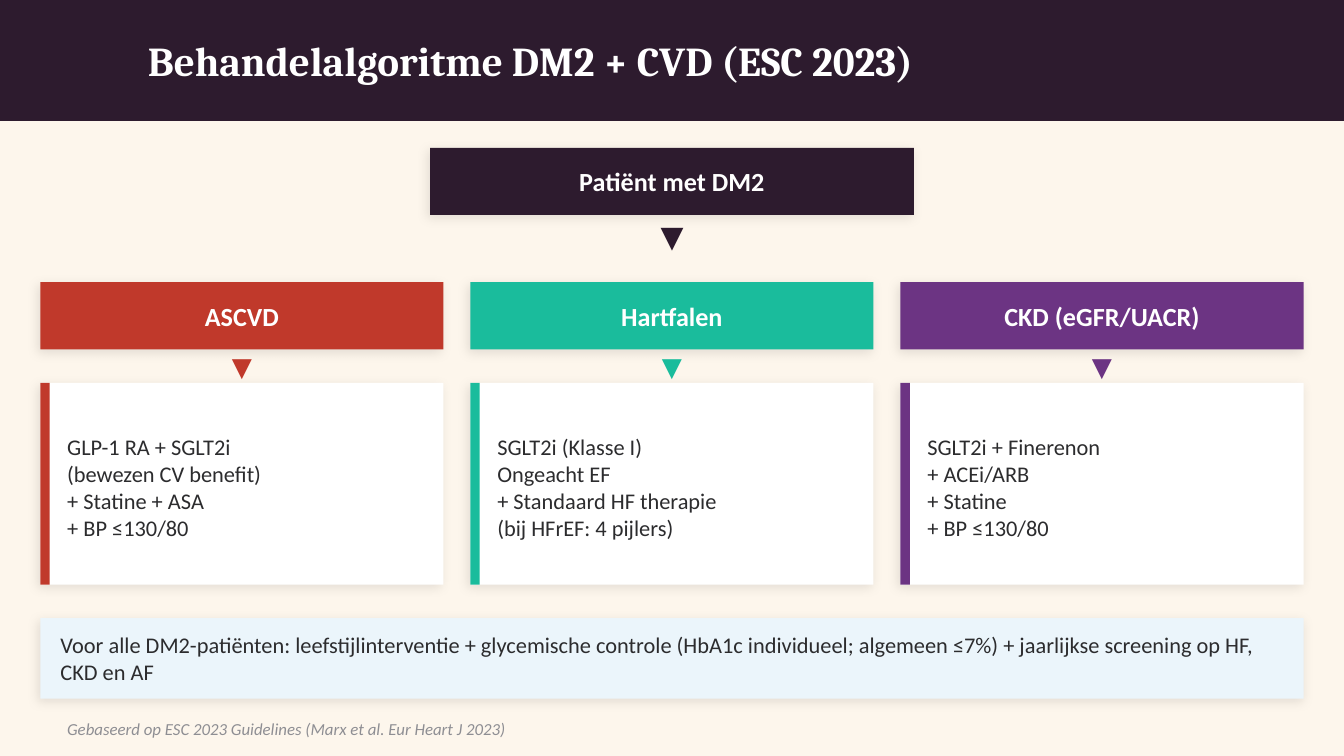
from lxml import etree
from pptx import Presentation
from pptx import util as u
from pptx.dml.color import RGBColor
from pptx.enum import shapes, text
from pptx.oxml.ns import qn

PX = u.Inches(1) // 200  # 200 px to the inch

THEME = {
    "page": "FDF6EC", "dark": "2D1B2E", "white": "FFFFFF", "ink": "2C2C2E",
    "note": "EBF5FB", "muted": "8E8E93",
    "red": "C0392B", "teal": "1ABC9C", "purple": "6C3483",
    "heading": "Cambria", "body": "Calibri",
    "title": 22, "big_arrow": 16, "label": 14, "text": 12, "source": 9,
}

prs = Presentation()
prs.slide_width, prs.slide_height = 2000 * PX, 1125 * PX
s = prs.slides.add_slide(prs.slide_layouts[6])
s.background.fill.solid()
s.background.fill.fore_color.rgb = RGBColor.from_string(THEME["page"])


def add_box(x, y, w, h, color, shadow=True):
    sp = s.shapes.add_shape(shapes.MSO_SHAPE.RECTANGLE, x * PX, y * PX, w * PX, h * PX)
    sp.fill.solid()
    sp.fill.fore_color.rgb = RGBColor.from_string(THEME[color])
    sp.line.fill.background()
    sp.shadow.inherit = False
    if shadow:
        effects = sp.element.spPr.find(qn("a:effectLst"))
        outer = etree.SubElement(effects, qn("a:outerShdw"), blurRad=str(u.Pt(6)),
                                 dist=str(u.Pt(2)), dir=str(135 * 60000),
                                 algn="bl", rotWithShape="0")
        black = etree.SubElement(outer, qn("a:srgbClr"), val="000000")
        etree.SubElement(black, qn("a:alpha"), val="10000")


def add_text(x, y, w, h, content, size, color, font="body",
             bold=False, italic=False, center=False):
    tf = s.shapes.add_textbox(x * PX, y * PX, w * PX, h * PX).text_frame
    tf.word_wrap = True
    tf.vertical_anchor = text.MSO_ANCHOR.MIDDLE
    tf.margin_left = tf.margin_top = tf.margin_right = tf.margin_bottom = 0
    tf.text = content
    for p in tf.paragraphs:
        p.alignment = text.PP_ALIGN.CENTER if center else text.PP_ALIGN.LEFT
        for r in p.runs:
            r.font.name = THEME[font]
            r.font.size = u.Pt(THEME[size])
            r.font.color.rgb = RGBColor.from_string(THEME[color])
            r.font.bold, r.font.italic = bold, italic


# Title bar
add_box(0, 0, 2000, 180, "dark", shadow=False)
add_text(220, 30, 1600, 120, "Behandelalgoritme DM2 + CVD (ESC 2023)", "title", "white",
         font="heading", bold=True)

# Starting point
add_box(640, 220, 720, 100, "dark")
add_text(640, 220, 720, 100, "Patiënt met DM2", "label", "white", bold=True, center=True)
add_text(940, 320, 120, 60, "▼", "big_arrow", "dark", center=True)

# One branch per comorbidity
branches = [
    ("ASCVD", "red",
     "GLP-1 RA + SGLT2i\n(bewezen CV benefit)\n+ Statine + ASA\n+ BP ≤130/80"),
    ("Hartfalen", "teal",
     "SGLT2i (Klasse I)\nOngeacht EF\n+ Standaard HF therapie\n(bij HFrEF: 4 pijlers)"),
    ("CKD (eGFR/UACR)", "purple",
     "SGLT2i + Finerenon\n+ ACEi/ARB\n+ Statine\n+ BP ≤130/80"),
]
width, gap = 600, 40
for i, (name, color, treatment) in enumerate(branches):
    x = 60 + i * (width + gap)
    add_box(x, 420, width, 100, color)
    add_text(x, 420, width, 100, name, "label", "white", bold=True, center=True)
    add_text(x + 240, 520, 120, 50, "▼", "label", color, center=True)
    add_box(x, 570, width, 300, "white")
    add_box(x, 570, 14, 300, color, shadow=False)
    add_text(x + 40, 590, 530, 270, treatment, "text", "ink")

# Advice for everyone, and source
add_box(60, 920, 1880, 120, "note")
add_text(90, 920, 1820, 120,
         "Voor alle DM2-patiënten: leefstijlinterventie + glycemische controle "
         "(HbA1c individueel; algemeen ≤7%) + jaarlijkse screening op HF, CKD en AF",
         "text", "ink")
add_text(100, 1060, 1800, 50,
         "Gebaseerd op ESC 2023 Guidelines (Marx et al. Eur Heart J 2023)",
         "source", "muted", italic=True)

prs.save("out.pptx")
